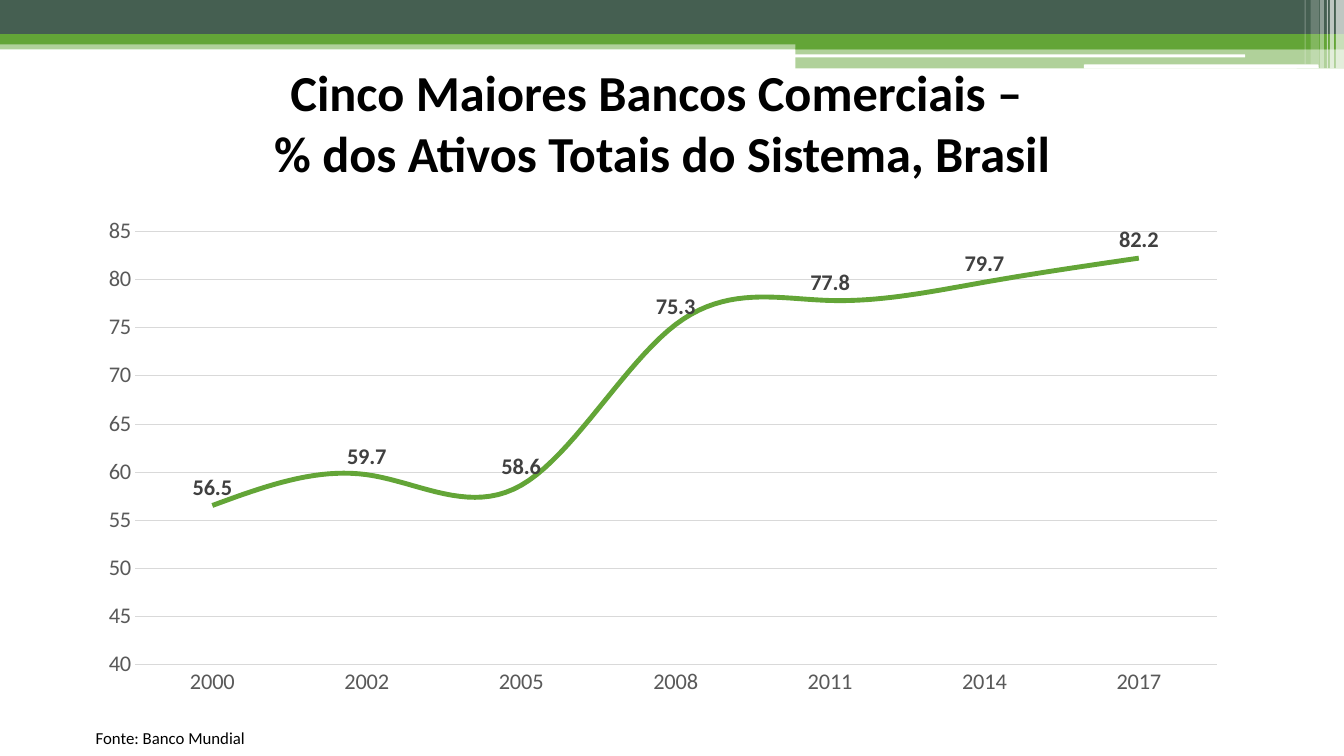
from lxml import etree
from pptx import Presentation
from pptx.chart.data import CategoryChartData
from pptx.dml.color import RGBColor
from pptx.enum.chart import XL_CHART_TYPE as Kind, XL_LABEL_POSITION as Spot, XL_TICK_MARK as Tick
from pptx.enum.dml import MSO_LINE as Dash
from pptx.enum.shapes import MSO_SHAPE as Form
from pptx.enum.text import MSO_ANCHOR as Anchor, PP_ALIGN as Align
from pptx.oxml.ns import qn
from pptx.util import Inches, Pt

GREEN, DARK, WHITE, BLACK = "63A537", "455F51", "FFFFFF", "000000"
GRAY, PALE, INK = "595959", "D9D9D9", "404040"


def rgb(code):
    return RGBColor.from_string(code)


class Deck:
    face = "Calibri"

    def __init__(self, slide):
        self.shapes = slide.shapes

    def style(self, font, size, color, bold=False):
        font.name, font.size, font.bold = self.face, Pt(size), bold
        font.color.rgb = rgb(color)

    def bar(self, box, color, alpha=100, form=Form.RECTANGLE):
        """Draw a borderless bar; alpha is its opacity in percent."""
        bar = self.shapes.add_shape(form, *map(Inches, box))
        bar.shadow.inherit = False
        bar.line.fill.background()
        bar.fill.solid()
        bar.fill.fore_color.rgb = rgb(color)
        if alpha < 100:
            tint = bar.fill._xPr.find(".//" + qn("a:srgbClr"))
            etree.SubElement(tint, qn("a:alpha"), val=str(alpha * 1000))

    def text(self, box, lines, size, bold=False, align=Align.LEFT, anchor=Anchor.TOP):
        frame = self.shapes.add_textbox(*map(Inches, box)).text_frame
        frame.word_wrap = True
        frame.vertical_anchor = anchor
        frame.text = "\n".join(lines)
        for para in frame.paragraphs:
            para.alignment = align
            for run in para.runs:
                self.style(run.font, size, BLACK, bold)

    def chart(self, box, cats, vals):
        data = CategoryChartData()
        data.categories = cats
        data.add_series("Series 1", vals)
        chart = self.shapes.add_chart(Kind.LINE, *map(Inches, box), data).chart
        chart.has_legend = chart.has_title = False
        self.style(chart.font, 10, BLACK)

        years, scale = chart.category_axis, chart.value_axis
        for axis in (years, scale):
            axis.major_tick_mark = axis.minor_tick_mark = Tick.NONE
            self.style(axis.tick_labels.font, 16, GRAY)
        years.format.line.color.rgb = rgb(PALE)
        years.format.line.width = Pt(0.75)
        scale.format.line.fill.background()
        scale.minimum_scale, scale.maximum_scale, scale.major_unit = 40, 85, 5
        grid = scale.major_gridlines.format.line
        grid.color.rgb = rgb(PALE)
        grid.width = Pt(0.25)
        grid.dash_style = Dash.ROUND_DOT

        plot = chart.plots[0]
        plot.vary_by_categories = False
        curve = plot.series[0]
        curve.smooth = True
        curve.format.line.color.rgb = rgb(GREEN)
        curve.format.line.width = Pt(3.5)
        labels = curve.data_labels
        labels.show_value = True
        labels.position = Spot.ABOVE
        self.style(labels.font, 16, INK, True)


def main():
    show = Presentation()
    show.slide_width, show.slide_height = Inches(13.33), Inches(7.5)
    deck = Deck(show.slides.add_slide(show.slide_layouts[6]))

    bands = [
        ((0, 0.4, 13.33, 0.09), GREEN, 50),
        ((0, 0, 13.33, 0.34), DARK, 100),
        ((0, 0.34, 13.33, 0.1), GREEN, 100),
        ((7.89, 0.39, 5.44, 0.1), GREEN, 100),
        ((7.89, 0.48, 5.44, 0.2), GREEN, 50),
    ]
    for box, color, alpha in bands:
        deck.bar(box, color, alpha)
    for box in ((7.88, 0.54, 4.47, 0.03), (10.75, 0.64, 2.33, 0.04)):
        deck.bar(box, WHITE, form=Form.ROUNDED_RECTANGLE)
    stripes = [
        (13.25, 0.08, 0.68, 65),
        (13.19, 0.04, 0.68, 65),
        (13.16, 0.01, 0.68, 60),
        (13.09, 0.04, 0.68, 40),
        (13, 0.08, 0.64, 20),
        (12.94, 0.01, 0.64, 30),
    ]
    for left, width, height, alpha in stripes:
        deck.bar((left, 0, width, height), WHITE, alpha)

    title = ["Cinco Maiores Bancos Comerciais – ", "% dos Ativos Totais do Sistema, Brasil"]
    deck.text((0.85, 0.62, 11.44, 1.18), title, 36, True, Align.CENTER, Anchor.MIDDLE)
    deck.text((0.85, 7.17, 2.58, 0.3), ["Fonte: Banco Mundial"], 12)
    deck.chart(
        (0.85, 2.06, 11.44, 4.94),
        ["2000", "2002", "2005", "2008", "2011", "2014", "2017"],
        [56.5, 59.7, 58.6, 75.3, 77.8, 79.7, 82.2],
    )
    show.save("out.pptx")


if __name__ == "__main__":
    main()
